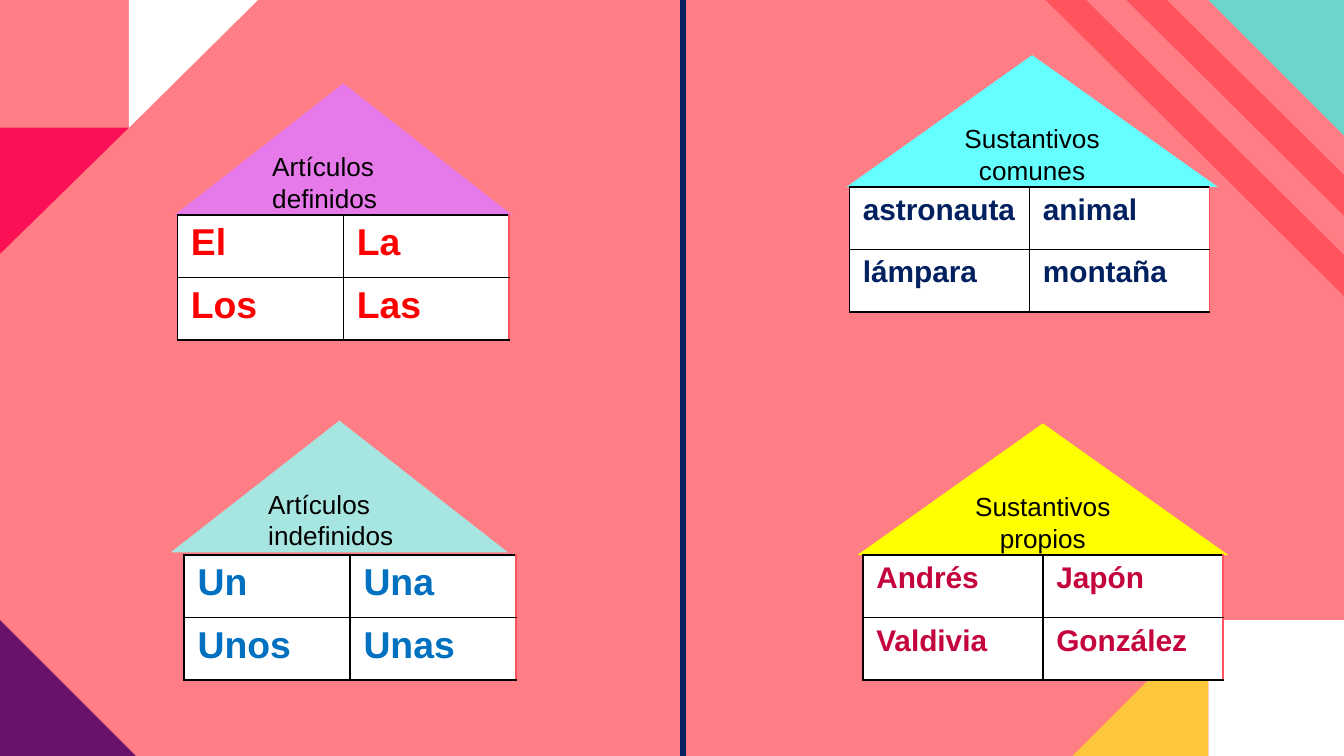
from lxml.etree import SubElement
from pptx import Presentation
from pptx.dml.color import RGBColor
from pptx.enum.shapes import MSO_CONNECTOR, MSO_SHAPE
from pptx.enum.text import MSO_ANCHOR, PP_ALIGN
from pptx.oxml import parse_xml
from pptx.oxml.ns import nsdecls, qn
from pptx.util import Inches, Pt

BLACK = RGBColor(0x00, 0x00, 0x00)
WHITE = RGBColor(0xFF, 0xFF, 0xFF)
SALMON = RGBColor(0xFF, 0x7D, 0x84)
CORAL = RGBColor(0xFF, 0x54, 0x5D)
AMBER = RGBColor(0xFF, 0xC5, 0x3B)
CRIMSON = RGBColor(0xFA, 0x11, 0x55)
PURPLE = RGBColor(0x69, 0x11, 0x6B)
TEAL = RGBColor(0x6D, 0xD6, 0xCC)
ORCHID = RGBColor(0xE7, 0x7A, 0xEA)
CYAN = RGBColor(0x66, 0xFF, 0xFF)
MINT = RGBColor(0xA7, 0xE6, 0xE0)
YELLOW = RGBColor(0xFF, 0xFF, 0x00)
RED = RGBColor(0xFF, 0x00, 0x00)
BLUE = RGBColor(0x00, 0x70, 0xC0)
NAVY = RGBColor(0x00, 0x20, 0x60)
RASPBERRY = RGBColor(0xC4, 0x04, 0x3C)

FONT = "Arial"
WIDTH = 10
HEIGHT = WIDTH * 9 / 16
CORNER = 1.01
KITE = 0.96
ROOF_HEIGHT = 0.98
TABLE_HEIGHT = 0.93

ARTICLES = {"roof_width": 2.51, "table_width": 2.47, "size": 20, "align": PP_ALIGN.LEFT}
NOUNS = {"roof_width": 2.76, "table_width": 2.68, "size": 16, "align": PP_ALIGN.CENTER}

HOUSES = [
    (ARTICLES, ["Artículos", "definidos"], ORCHID, (1.3, 0.62),
     [["El", "La"], ["Los", "Las"]], RED, (1.32, 1.6)),
    (NOUNS, ["Sustantivos comunes"], CYAN, (6.3, 0.41),
     [["astronauta", "animal"], ["lámpara", "montaña"]], NAVY, (6.32, 1.39)),
    (ARTICLES, ["Artículos", "indefinidos"], MINT, (1.27, 3.13),
     [["Un", "Una"], ["Unos", "Unas"]], BLUE, (1.37, 4.13)),
    (NOUNS, ["Sustantivos propios"], YELLOW, (6.38, 3.15),
     [["Andrés", "Japón"], ["Valdivia", "González"]], RASPBERRY, (6.42, 4.13)),
]

POLYGONS = [
    ([(8.68, 0), (10.8, 2.09), (10.64, 2.24), (8.38, 0)], CORAL),
    ([(8.08, 0), (10.5, 2.39), (10.34, 2.54), (7.78, 0)], CORAL),
    ([(KITE, 0), (2 * KITE, 0), (KITE, 0.95)], WHITE),
    ([(0, 0.95), (KITE, 0.95), (0, 1.89)], CRIMSON),
]

RIGHT, BOTTOM = WIDTH - CORNER, HEIGHT - CORNER
CORNERS = [
    (MSO_SHAPE.RECTANGLE, RIGHT, BOTTOM, WHITE, 0, False),
    (MSO_SHAPE.RIGHT_TRIANGLE, RIGHT - CORNER, BOTTOM, AMBER, 0, True),
    (MSO_SHAPE.RIGHT_TRIANGLE, 0, BOTTOM, PURPLE, 0, False),
    (MSO_SHAPE.RIGHT_TRIANGLE, RIGHT, 0, TEAL, 180, False),
]


def paint(shape, color):
    shape.shadow.inherit = False
    shape.fill.solid()
    shape.fill.fore_color.rgb = color
    shape.line.fill.background()


def format_text(paragraph, size, color, bold=False):
    for run in paragraph.runs:
        run.font.name = FONT
        run.font.size = Pt(size)
        run.font.bold = bold
        run.font.color.rgb = color


def add_polygon(slide, points, color):
    corners = [(Inches(x), Inches(y)) for x, y in points]
    builder = slide.shapes.build_freeform(*corners[0])
    builder.add_line_segments(corners[1:], close=True)
    paint(builder.convert_to_shape(), color)


def add_corner(slide, kind, left, top, color, rotation, flipped):
    shape = slide.shapes.add_shape(
        kind, Inches(left), Inches(top), Inches(CORNER), Inches(CORNER))
    paint(shape, color)
    shape.rotation = rotation
    if flipped:
        shape._element.spPr.xfrm.set("flipH", "1")


def add_roof(slide, style, lines, color, position):
    left, top = position
    roof = slide.shapes.add_shape(
        MSO_SHAPE.ISOSCELES_TRIANGLE, Inches(left), Inches(top),
        Inches(style["roof_width"]), Inches(ROOF_HEIGHT))
    paint(roof, color)
    frame = roof.text_frame
    frame.word_wrap = True
    frame.vertical_anchor = MSO_ANCHOR.MIDDLE
    frame.margin_left = frame.margin_right = Inches(0.1)
    frame.margin_top = frame.margin_bottom = Inches(0.1)
    frame.text = "\n".join(lines)
    for paragraph in frame.paragraphs:
        paragraph.alignment = style["align"]
        format_text(paragraph, 14, BLACK)


def set_borders(cell, colors):
    properties = cell._tc.get_or_add_tcPr()
    for index, (side, color) in enumerate(zip("LRTB", colors)):
        border = parse_xml(
            f'<a:ln{side} {nsdecls("a")} w="{Pt(1)}"><a:solidFill>'
            f'<a:srgbClr val="{color}"/></a:solidFill></a:ln{side}>')
        properties.insert(index, border)


def add_words(slide, style, rows, color, position):
    left, top = position
    columns = len(rows[0])
    table = slide.shapes.add_table(
        len(rows), columns, Inches(left), Inches(top),
        Inches(style["table_width"]), Inches(TABLE_HEIGHT)).table
    table.first_row = table.horz_banding = False
    for row, words in enumerate(rows):
        for column, word in enumerate(words):
            cell = table.cell(row, column)
            cell.text = word
            format_text(cell.text_frame.paragraphs[0], style["size"], color, True)
            cell.fill.solid()
            cell.fill.fore_color.rgb = WHITE
            right = CORAL if column == columns - 1 else BLACK
            set_borders(cell, [BLACK, right, BLACK, BLACK])


def add_divider(slide):
    divider = slide.shapes.add_connector(
        MSO_CONNECTOR.STRAIGHT, Inches(5.08), 0, Inches(5.08), Inches(5.72))
    divider.line.color.rgb = NAVY
    divider.line.width = Pt(3)
    SubElement(divider._element.spPr, qn("a:effectLst"))


def main():
    presentation = Presentation()
    presentation.slide_width = Inches(WIDTH)
    presentation.slide_height = Inches(HEIGHT)
    slide = presentation.slides.add_slide(presentation.slide_layouts[6])
    slide.background.fill.solid()
    slide.background.fill.fore_color.rgb = SALMON
    for points, color in POLYGONS:
        add_polygon(slide, points, color)
    for corner in CORNERS:
        add_corner(slide, *corner)
    add_divider(slide)
    for style, lines, roof_color, roof_at, rows, word_color, words_at in HOUSES:
        add_roof(slide, style, lines, roof_color, roof_at)
        add_words(slide, style, rows, word_color, words_at)
    presentation.save("out.pptx")


if __name__ == "__main__":
    main()
